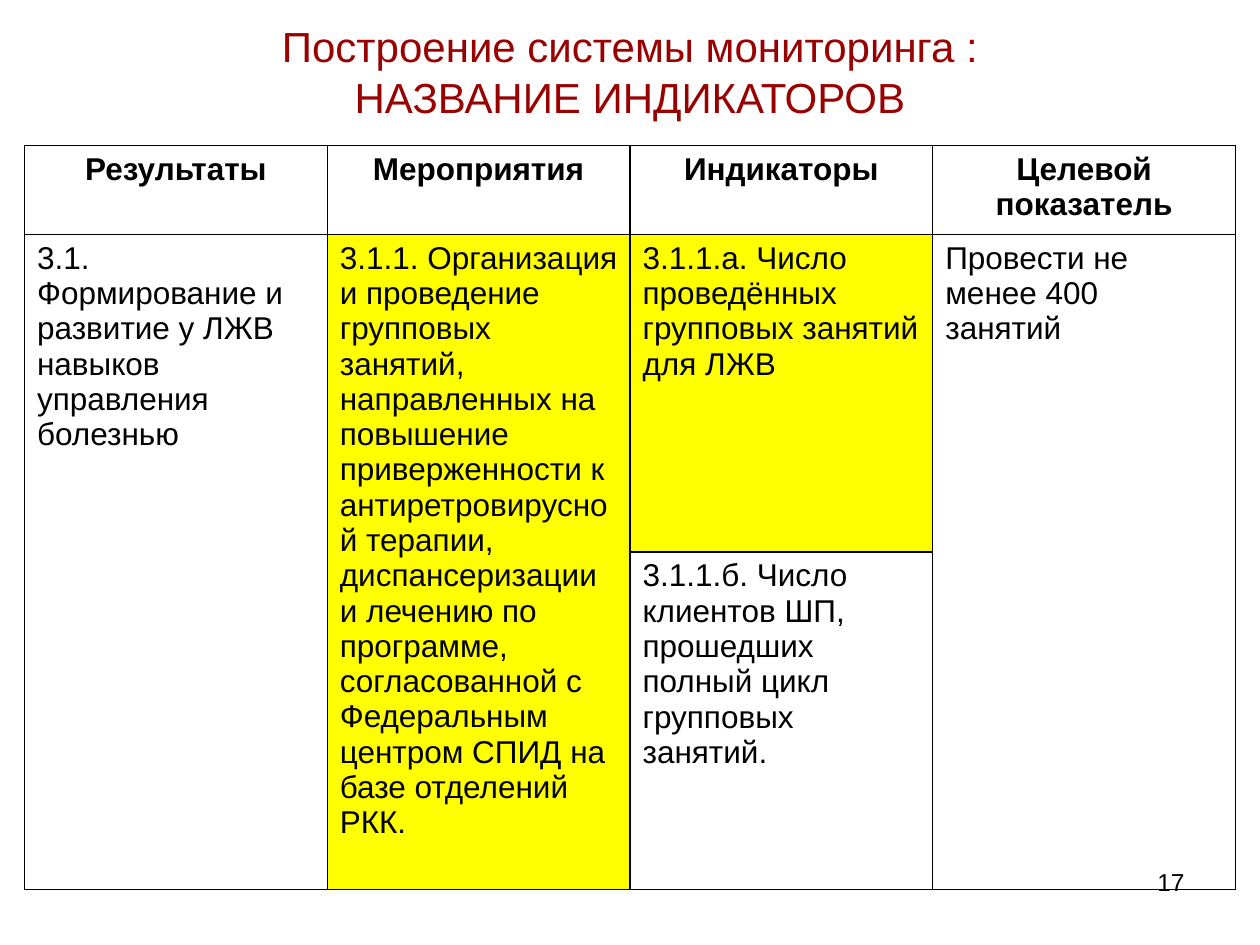
"""Build the slide on indicator names in a monitoring system."""
from lxml import etree
from pptx import Presentation
from pptx.dml.color import RGBColor
from pptx.enum import text
from pptx.oxml import ns
from pptx.util import Pt

TITLE = "Построение системы мониторинга :\nНАЗВАНИЕ ИНДИКАТОРОВ"
PAGE = "17"
HEADS = ["Результаты", "Мероприятия", "Индикаторы", "Целевой показатель"]
BODY = [
    ["3.1. Формирование и развитие у ЛЖВ навыков управления болезнью",
     "3.1.1. Организация и проведение групповых занятий, направленных на "
     "повышение приверженности к антиретровирусной терапии, диспансеризации "
     "и лечению по программе, согласованной с Федеральным центром СПИД на "
     "базе отделений РКК.",
     "3.1.1.а. Число проведённых групповых занятий для ЛЖВ",
     "Провести не менее 400 занятий"],
    ["", "", "3.1.1.б. Число клиентов ШП, прошедших полный цикл групповых занятий.", ""],
]
ROWS = [HEADS] + BODY
HIGHS = [51, 181.5, 189]
WIDE = 173
TALL = (0, 1, 3)
MARKED = {(1, 1), (1, 2)}
ALIGN = text.PP_ALIGN


def color(code):
    return RGBColor.from_string(code)


def write(frame, words, size, align, tint="000000", bold=False):
    para = frame.paragraphs[0]
    para.text = words
    para.alignment = align
    for run in para.runs:
        run.font.name = "Arial"
        run.font.size = Pt(size)
        run.font.bold = bold
        run.font.color.rgb = color(tint)


def add_text(slide, box, words, size, align, anchor, tint="000000"):
    frame = slide.shapes.add_textbox(*map(Pt, box)).text_frame
    frame.word_wrap = True
    frame.vertical_anchor = anchor
    write(frame, words, size, align, tint)


def add_borders(cell):
    props = cell._tc.get_or_add_tcPr()
    for side in ("lnL", "lnR", "lnT", "lnB"):
        line = etree.SubElement(props, ns.qn(f"a:{side}"), w=str(Pt(1)))
        fill = etree.SubElement(line, ns.qn("a:solidFill"))
        etree.SubElement(fill, ns.qn("a:srgbClr"), val="000000")


def add_grid(slide):
    count = len(HEADS)
    table = slide.shapes.add_table(
        len(ROWS), count, Pt(14), Pt(83), Pt(WIDE * count), Pt(sum(HIGHS))).table
    table.first_row = table.horz_banding = False
    for col in table.columns:
        col.width = Pt(WIDE)
    for r, (row, high) in enumerate(zip(ROWS, HIGHS)):
        table.rows[r].height = Pt(high)
        for c, words in enumerate(row):
            cell = table.cell(r, c)
            add_borders(cell)
            if (r, c) in MARKED:
                cell.fill.solid()
                cell.fill.fore_color.rgb = color("FFFF00")
            else:
                cell.fill.background()
            head = r == 0
            write(cell.text_frame, words, 18,
                  ALIGN.CENTER if head else ALIGN.LEFT, bold=head)
    for c in TALL:
        table.cell(1, c).merge(table.cell(2, c))


def main():
    deck = Presentation()
    deck.slide_width, deck.slide_height = Pt(720), Pt(540)
    slide = deck.slides.add_slide(deck.slide_layouts[6])
    add_text(slide, (516, 492, 168, 37.5), PAGE, 14, ALIGN.RIGHT,
             text.MSO_ANCHOR.TOP)
    add_text(slide, (36, 9.5, 648, 62.5), TITLE, 24, ALIGN.CENTER,
             text.MSO_ANCHOR.MIDDLE, "990000")
    add_grid(slide)
    deck.save("out.pptx")


if __name__ == "__main__":
    main()
